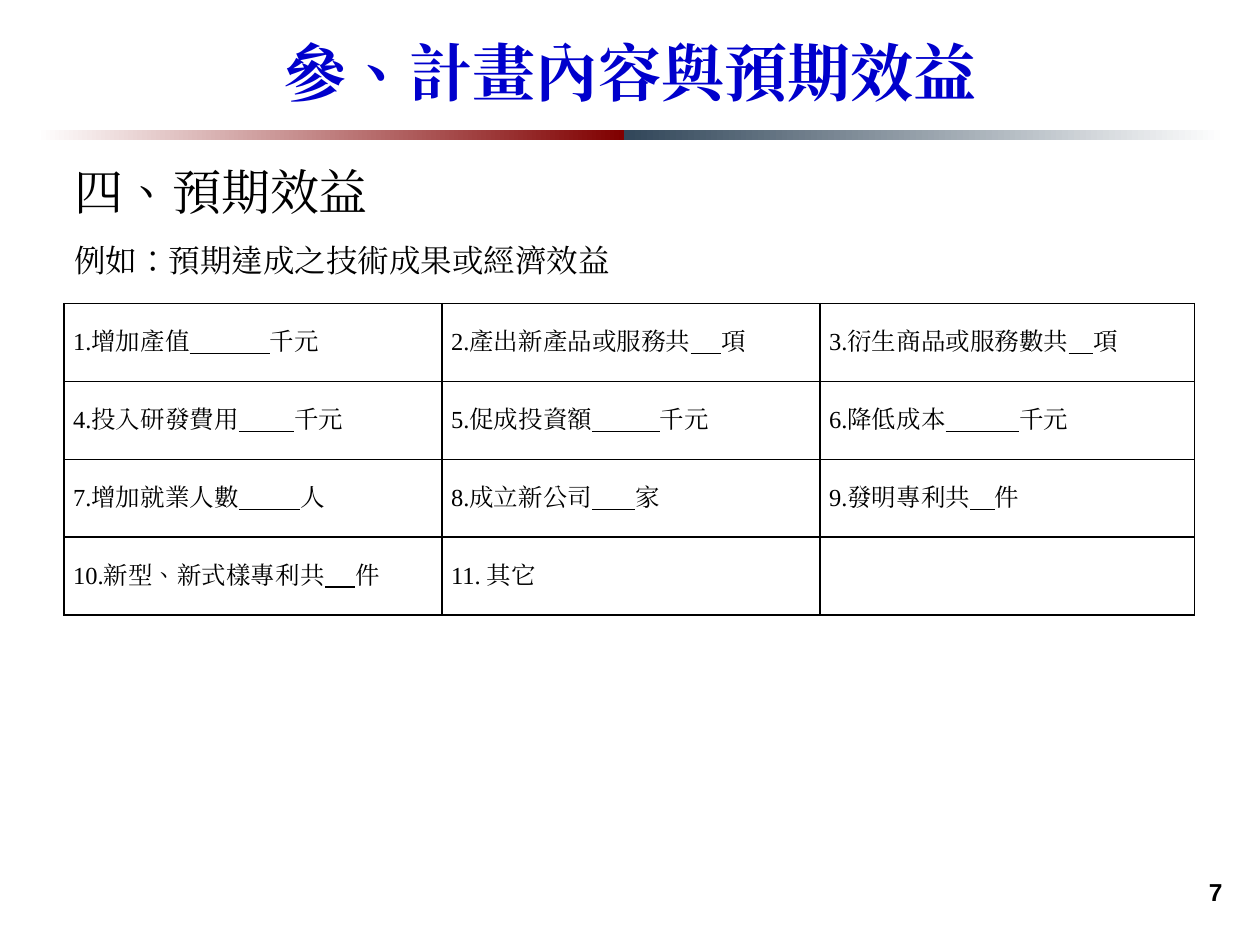
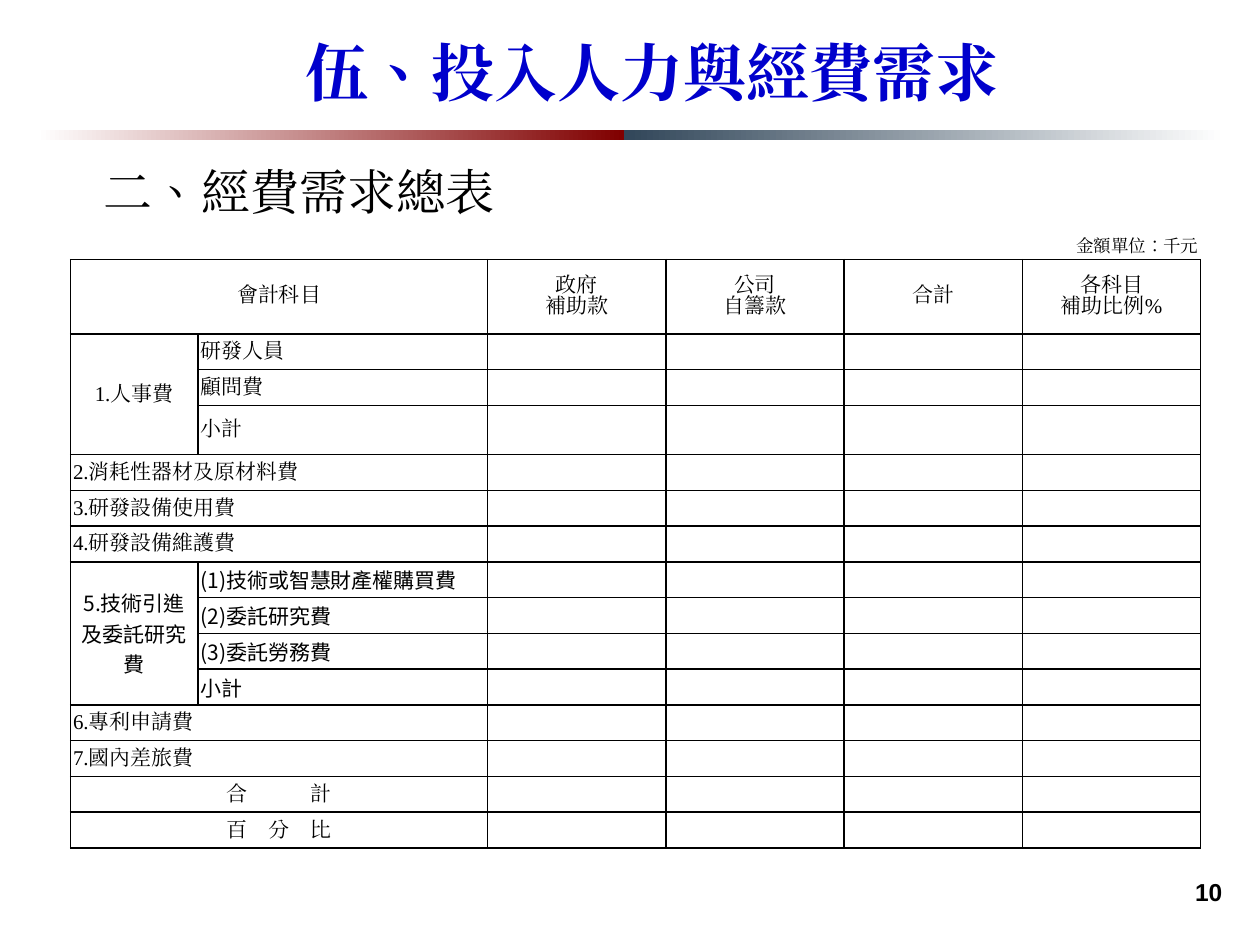
"""Build two plan slides: expected benefits and the budget summary."""
from lxml import etree
from pptx import Presentation
from pptx.dml.color import RGBColor
from pptx.enum.shapes import MSO_SHAPE
from pptx.enum.text import MSO_ANCHOR, MSO_AUTO_SIZE, PP_ALIGN
from pptx.oxml.ns import qn
from pptx.util import Inches, Pt

RECT = MSO_SHAPE.RECTANGLE
TOP, MIDDLE = MSO_ANCHOR.TOP, MSO_ANCHOR.MIDDLE
NO_FIT = MSO_AUTO_SIZE.NONE
ALIGNS = {"^": PP_ALIGN.CENTER, ">": PP_ALIGN.RIGHT}
LEFT, CENTER, RIGHT = PP_ALIGN.LEFT, PP_ALIGN.CENTER, PP_ALIGN.RIGHT
SERIF, SANS, CJK = "Times New Roman", "Arial", "Noto Sans CJK SC"
BLACK, BLUE, WHITE, RED, SLATE = "000000", "0000CC", "FFFFFF", "800000", "314659"

prs = Presentation()
prs.slide_width, prs.slide_height = Inches(10), Inches(7.5)
UNIT = prs.slide_width // 100


def grid(*cells):
    """Turn units of a 100 by 75 slide grid into lengths."""
    return [round(c * UNIT) for c in cells]


def write(p, text, size=12, font=SERIF, color=BLACK, bold=False, align=LEFT, after=0):
    """Fill a paragraph; every second part between bars is the width of an underlined blank."""
    p.alignment, p.space_before, p.space_after = align, Pt(0), Pt(after)
    for i, part in enumerate(text.split("|")):
        r = p.add_run()
        r.text = " " * int(part) if i % 2 else part
        r.font.size, r.font.name, r.font.bold = Pt(size), font, bold
        r.font.underline = bool(i % 2)
        r.font.color.rgb = RGBColor.from_string(color)
        rPr = r._r.get_or_add_rPr()
        rPr.set("lang", "zh-TW")
        ea = etree.Element(qn("a:ea"), typeface=font)
        rPr.find(qn("a:latin")).addnext(ea)


benefits = [
    ["1.增加產值|13|千元", "2.產出新產品或服務共|5|項", "3.衍生商品或服務數共|4|項"],
    ["4.投入研發費用|9|千元", "5.促成投資額|11|千元", "6.降低成本|12|千元"],
    ["7.增加就業人數|10|人", "8.成立新公司|7|家", "9.發明專利共|4|件"],
    ["10.新型、新式樣專利共|5|件", "11. 其它", ""],
]
budget = [
    [">金額單位：千元"],
    ["^會計科目", "", "^政府\n補助款", "^公司\n自籌款", "^合計", "^各科目\n補助比例%"],
    ["^1.人事費", "研發人員"],
    ["", "顧問費"],
    ["", "小計"],
    ["2.消耗性器材及原材料費"],
    ["3.研發設備使用費"],
    ["4.研發設備維護費"],
    ["^5.技術引進及委託研究費", "(1)技術或智慧財產權購買費"],
    ["", "(2)委託研究費"],
    ["", "(3)委託勞務費"],
    ["", "小計"],
    ["6.專利申請費"],
    ["7.國內差旅費"],
    ["^合\u3000\u3000\u3000計".replace("\u3000", "　")],
    ["^百　分　比"],
]
budget_merges = [(0, 0, 0, 5), (2, 0, 4, 0), (8, 0, 11, 0)]
budget_merges += [(r, 0, r, 1) for r in (1, 5, 6, 7, 12, 13, 14, 15)]

pages = [
    dict(number="7", title="參、計畫內容與預期效益", title_at=(0, 2.1, 100, 7.1),
         body=[("四、預期效益", 28), ("例如：預期達成之技術成果或經濟效益", 18)],
         body_at=(2, 12.3, 94.5, 10.4), rows=benefits, table_at=(5.1, 24.1),
         widths=[30, 30, 29.7], heights=[6.18] * 4, inset=0.7, size=14,
         merges=[], cjk_rows=[], caption_rows=0),
    dict(number="10", title="伍、投入人力與經費需求", title_at=(3.5, 2.1, 96.5, 7.1),
         body=[("二、經費需求總表", 28)],
         body_at=(4.3, 12.3, 90.6, 5.7), rows=budget, table_at=(5.6, 18.6),
         widths=[10.1, 23] + [14.15] * 4, heights=[2, 5.9, 2.84, 2.84, 3.9] + [2.84] * 11,
         inset=0.2, size=12, merges=budget_merges, cjk_rows=range(8, 12), caption_rows=1),
]
bands = [(2.9, 46.6, WHITE, RED), (49.5, 47.8, SLATE, WHITE)]

for page in pages:
    s = prs.slides.add_slide(prs.slide_layouts[1])

    for left, width, start, end in bands:
        sp = s.shapes.add_shape(RECT, *grid(left, 10.3, width, 0.8))
        sp.shadow.inherit = False
        sp.line.fill.background()
        sp.fill.gradient()
        sp.fill.gradient_angle = 0
        for stop, color, position in zip(sp.fill.gradient_stops, (start, end), (0, 1)):
            stop.color.rgb = RGBColor.from_string(color)
            stop.position = position

    title, body = s.placeholders
    for sp, at, anchor in ((title, page["title_at"], MIDDLE), (body, page["body_at"], TOP)):
        sp.left, sp.top, sp.width, sp.height = grid(*at)
        tf = sp.text_frame
        tf.word_wrap, tf.auto_size, tf.vertical_anchor = True, NO_FIT, anchor
    write(title.text_frame.paragraphs[0], page["title"], size=36, color=BLUE,
          bold=True, align=CENTER)
    for i, (text, size) in enumerate(page["body"]):
        tf = body.text_frame
        p = tf.add_paragraph() if i else tf.paragraphs[0]
        pPr = p._p.get_or_add_pPr()
        pPr.set("marL", "0")
        pPr.set("indent", str(grid(2.9)[0]))
        etree.SubElement(pPr, qn("a:buNone"))
        write(p, text, size=size, after=6)
        p.space_before = Pt(6 if i else 0)

    sp = s.shapes.add_textbox(*grid(77.2, 68.3, 20.8, 5))
    tf = sp.text_frame
    tf.word_wrap, tf.vertical_anchor = True, MIDDLE
    write(tf.paragraphs[0], page["number"], size=14, font=SANS, bold=True, align=RIGHT)

    widths, heights = page["widths"], page["heights"]
    table = s.shapes.add_table(len(heights), len(widths), *grid(
        *page["table_at"], sum(widths), sum(heights))).table
    table.first_row = table.horz_banding = False
    for column, width in zip(table.columns, grid(*widths)):
        column.width = width
    for row, height in zip(table.rows, grid(*heights)):
        row.height = height

    for r, texts in enumerate(page["rows"]):
        caption = r < page["caption_rows"]
        for c in range(len(widths)):
            cell = table.cell(r, c)
            cell.margin_left = cell.margin_right = grid(page["inset"])[0]
            cell.margin_top = cell.margin_bottom = 0
            cell.vertical_anchor = MIDDLE
            tcPr = cell._tc.get_or_add_tcPr()
            for side in ("lnL", "lnR", "lnT", "lnB"):
                ln = etree.SubElement(tcPr, qn("a:" + side), w=str(Pt(1)))
                if caption and side != "lnB":
                    etree.SubElement(ln, qn("a:noFill"))
                else:
                    fill = etree.SubElement(ln, qn("a:solidFill"))
                    etree.SubElement(fill, qn("a:srgbClr"), val=BLACK)
            cell.fill.background()

            text = texts[c] if c < len(texts) else ""
            tf = cell.text_frame
            if not text:
                etree.SubElement(tf.paragraphs[0]._p, qn("a:endParaRPr"),
                                 sz=str(page["size"] * 100))
                continue
            align = ALIGNS.get(text[0], LEFT)
            for i, line in enumerate(text.lstrip("^>").split("\n")):
                p = tf.add_paragraph() if i else tf.paragraphs[0]
                write(p, line, size=10 if caption else page["size"], align=align,
                      font=CJK if r in page["cjk_rows"] else SERIF)
                if page["caption_rows"] and r == 1:
                    p.line_spacing = Pt(12)

    for top, left, bottom, right in page["merges"]:
        table.cell(top, left).merge(table.cell(bottom, right))

prs.save("out.pptx")
